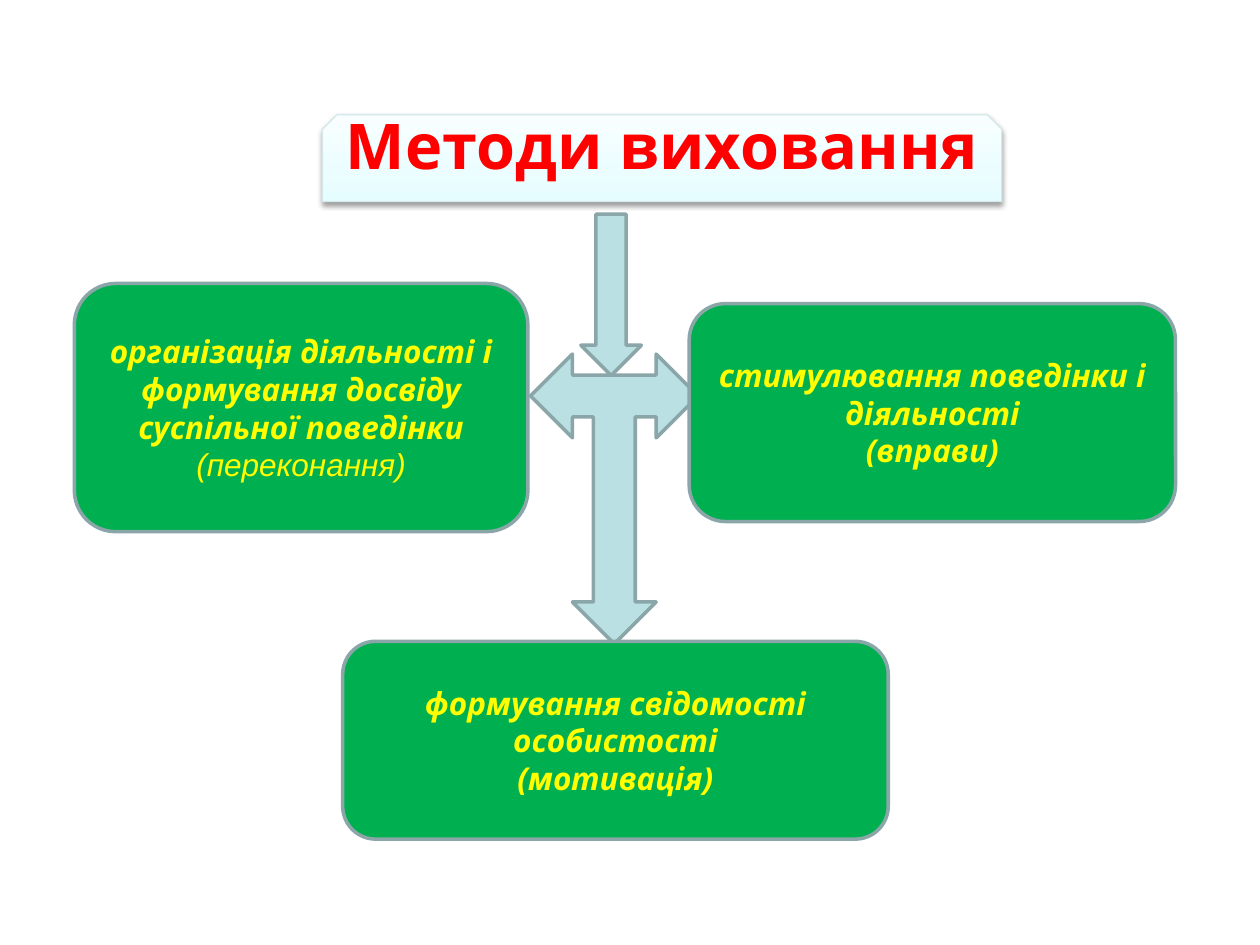
from dataclasses import dataclass

from lxml.etree import SubElement
from pptx import Presentation
from pptx.dml.color import RGBColor
from pptx.enum.shapes import MSO_SHAPE as Shape
from pptx.enum.text import MSO_ANCHOR as Anchor, PP_ALIGN as Align
from pptx.oxml.ns import qn
from pptx.util import Inches, Pt


@dataclass(frozen=True)
class Theme:
    heading_font: str = "Open Sans"
    plain_font: str = "Arial"
    heading_size: int = 36
    label_size: int = 18
    heading_color: str = "FF0000"
    label_color: str = "FFFF00"
    box_fill: str = "00B050"
    arrow_fill: str = "BBE0E3"
    outline: str = "8AA6A8"
    outline_width: float = 2
    banner_outline: str = "D5E8EA"
    banner_stops: tuple = ((0, "E6FDFF"), (35, "ECFDFF"), (100, "F8FEFF"))
    shadow: str = "000000"


THEME = Theme()


def add_figure(page, kind, place, fill, line=THEME.outline,
               width=THEME.outline_width):
    figure = page.shapes.add_shape(kind, *map(Inches, place))
    figure.shadow.inherit = False
    figure.fill.solid()
    figure.fill.fore_color.rgb = RGBColor.from_string(fill)
    figure.line.color.rgb = RGBColor.from_string(line)
    figure.line.width = Pt(width)
    return figure


def write(para, text, size=THEME.label_size, color=THEME.label_color,
          font=THEME.heading_font, bold=True, italic=True):
    para.alignment = Align.CENTER
    span = para.add_run()
    span.text = text
    span.font.name = font
    span.font.size = Pt(size)
    span.font.bold = bold
    span.font.italic = italic
    span.font.color.rgb = RGBColor.from_string(color)


def add_color(parent, color):
    return SubElement(parent, qn("a:srgbClr"), val=color)


def add_banner(page, text, place):
    box = add_figure(page, Shape.SNIP_2_SAME_RECTANGLE, place, "FFFFFF",
                     THEME.banner_outline, 0.75)

    # Three-stop gradient running upwards
    box.fill.gradient()
    box.fill.gradient_angle = 90
    stops = box._element.spPr.find(qn("a:gradFill")).find(qn("a:gsLst"))
    for stop in list(stops):
        stops.remove(stop)
    for position, color in THEME.banner_stops:
        add_color(SubElement(stops, qn("a:gs"), pos=str(position * 1000)), color)

    # Soft shadow below
    effects = box._element.spPr.find(qn("a:effectLst"))
    shadow = SubElement(effects, qn("a:outerShdw"), blurRad=str(Pt(3.1)),
                        dist=str(Pt(1.6)), dir="5400000", rotWithShape="0")
    SubElement(add_color(shadow, THEME.shadow), qn("a:alpha"), val="38000")

    # The deep lower margin lifts the heading
    frame = box.text_frame
    frame.word_wrap = True
    frame.vertical_anchor = Anchor.MIDDLE
    frame.margin_bottom = Inches(0.33)
    write(frame.paragraphs[0], text, size=THEME.heading_size,
          color=THEME.heading_color, italic=False)


def add_method(page, text, example, place, kind=Shape.ROUNDED_RECTANGLE,
               **example_format):
    box = add_figure(page, kind, place, THEME.box_fill)
    frame = box.text_frame
    frame.word_wrap = True
    frame.vertical_anchor = Anchor.MIDDLE
    write(frame.paragraphs[0], text)
    write(frame.add_paragraph(), example, **example_format)


def main():
    deck = Presentation()
    deck.slide_width, deck.slide_height = Inches(10), Inches(7.5)
    page = deck.slides.add_slide(deck.slide_layouts[6])

    # Heading
    add_banner(page, "Методи виховання", (2.56, 0.91, 5.39, 0.69))

    # Arrows
    add_figure(page, Shape.DOWN_ARROW, (4.61, 1.7, 0.48, 1.28), THEME.arrow_fill)
    branch = add_figure(page, Shape.LEFT_RIGHT_UP_ARROW, (4.21, 2.81, 1.33, 2.3),
                        THEME.arrow_fill)
    branch.rotation = 180

    # Methods
    add_method(page, "стимулювання поведінки і діяльності", "(вправи)",
               (5.47, 2.41, 3.86, 1.73))
    add_method(page,
               "організація діяльності і формування досвіду суспільної поведінки",
               "(переконання)", (0.59, 2.25, 3.6, 1.97),
               font=THEME.plain_font, bold=False)
    add_method(page, "формування свідомості особистості", "(мотивація)",
               (2.72, 5.09, 4.33, 1.57), kind=Shape.FLOWCHART_ALTERNATE_PROCESS)

    deck.save("out.pptx")


if __name__ == "__main__":
    main()
